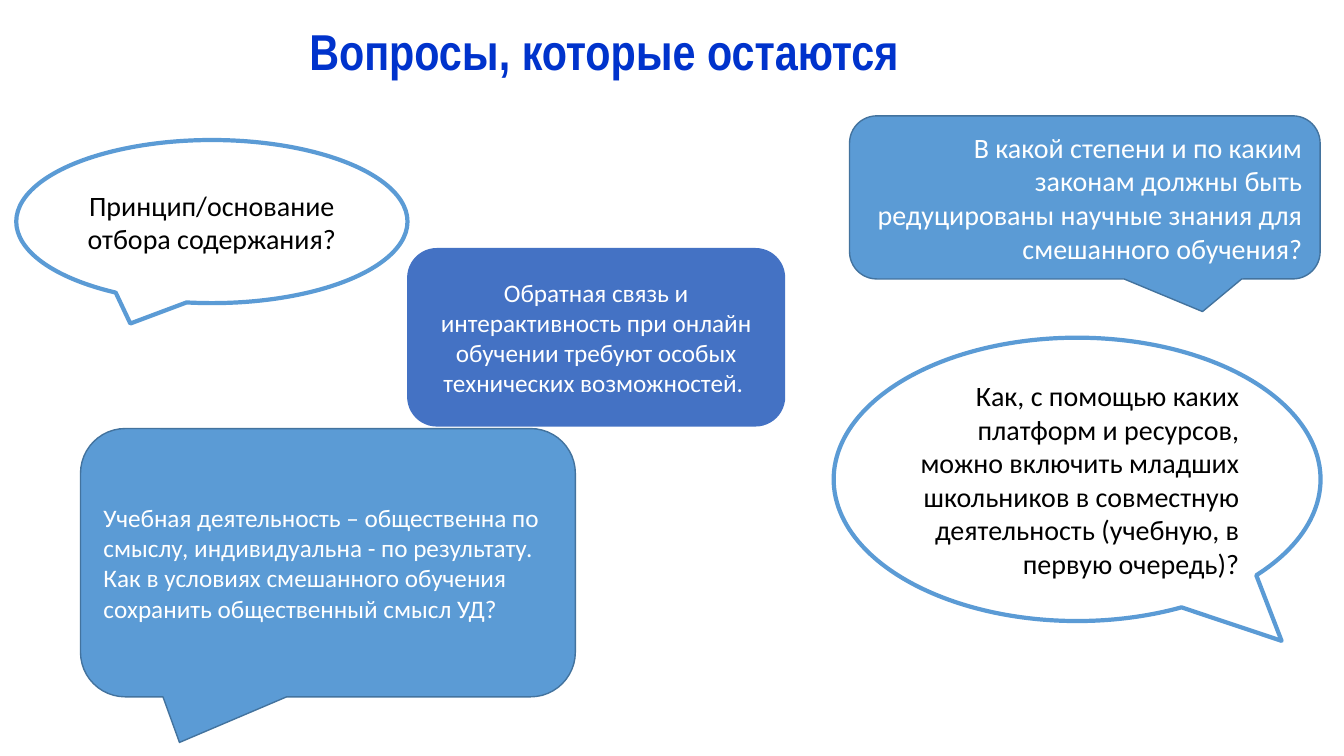
from dataclasses import dataclass

from pptx import Presentation
from pptx.dml.color import RGBColor
from pptx.enum.shapes import MSO_SHAPE
from pptx.enum.text import MSO_ANCHOR, MSO_AUTO_SIZE, PP_ALIGN
from pptx.slide import Slide
from pptx.util import Cm, Pt

OVAL_CALLOUT = MSO_SHAPE.OVAL_CALLOUT
ROUNDED_CALLOUT = MSO_SHAPE.ROUNDED_RECTANGULAR_CALLOUT
ROUNDED_BOX = MSO_SHAPE.ROUNDED_RECTANGLE
LEFT, CENTER, RIGHT = PP_ALIGN.LEFT, PP_ALIGN.CENTER, PP_ALIGN.RIGHT
MIDDLE = MSO_ANCHOR.MIDDLE
NO_AUTOFIT = MSO_AUTO_SIZE.NONE

WHITE = RGBColor(0xFF, 0xFF, 0xFF)
BLACK = RGBColor(0x00, 0x00, 0x00)
TITLE_BLUE = RGBColor(0x00, 0x33, 0xCC)
LIGHT_BLUE = RGBColor(0x5B, 0x9B, 0xD5)
EDGE_BLUE = RGBColor(0x43, 0x73, 0x9E)
DEEP_BLUE = RGBColor(0x44, 0x72, 0xC4)

TITLE_LAYOUT = 5


@dataclass(frozen=True)
class Style:
    outline: MSO_SHAPE
    fill: RGBColor
    text: RGBColor
    line: RGBColor | None = None
    line_width: float = 0


@dataclass(frozen=True)
class Question:
    """A bubble; frame is left, top, width, height in cm, tip the pointer offset."""
    text: str
    style: Style
    frame: tuple[float, float, float, float]
    size: int
    align: PP_ALIGN
    tip: tuple[float, float] | None = None


OVAL = Style(OVAL_CALLOUT, WHITE, BLACK, LIGHT_BLUE, 3)
SPEECH = Style(ROUNDED_CALLOUT, LIGHT_BLUE, WHITE, EDGE_BLUE, 1)
PANEL = Style(ROUNDED_BOX, DEEP_BLUE, WHITE)

QUESTIONS = [
    Question("Принцип/основание отбора содержания?",
             OVAL, (0.41, 3.53, 9.86, 4.11), 20, CENTER),
    Question("В какой степени и по каким законам должны быть редуцированы "
             "научные знания для смешанного обучения?",
             SPEECH, (21.41, 2.92, 11.86, 4.11), 20, RIGHT, (0.25, 0.7)),
    Question("Обратная связь и интерактивность при онлайн обучении требуют "
             "особых технических возможностей. ",
             PANEL, (10.26, 6.25, 9.53, 4.5), 18, CENTER),
    Question("Как, с помощью каких платформ и ресурсов, можно включить младших "
             "школьников в совместную деятельность (учебную, в первую очередь)?",
             OVAL, (21.01, 8.51, 12.27, 7.14), 20, RIGHT, (0.42, 0.57)),
    Question("Учебная деятельность – общественна по смыслу, индивидуальна - по "
             "результату. Как в условиях смешанного обучения сохранить "
             "общественный смысл УД?",
             SPEECH, (2.03, 10.8, 12.47, 6.76), 18, LEFT, (-0.3, 0.67)),
]


def add_title(page: Slide, text: str) -> None:
    title = page.shapes.title
    title.left, title.top = Cm(7.54), Cm(0.36)
    title.width, title.height = Cm(17.4), Cm(1.8)
    frame = title.text_frame
    frame.text = text
    frame.auto_size = NO_AUTOFIT
    frame.vertical_anchor = MIDDLE
    para = frame.paragraphs[0]
    para.alignment = LEFT
    para.font.name = "Arial Narrow"
    para.font.size = Pt(36)
    para.font.bold = True
    para.font.color.rgb = TITLE_BLUE


def add_question(page: Slide, question: Question) -> None:
    style = question.style
    box = page.shapes.add_shape(style.outline, *map(Cm, question.frame))
    box.shadow.inherit = False
    box.fill.solid()
    box.fill.fore_color.rgb = style.fill
    if style.line is None:
        box.line.fill.background()
    else:
        box.line.color.rgb = style.line
        box.line.width = Pt(style.line_width)
    if question.tip:
        box.adjustments[0], box.adjustments[1] = question.tip

    frame = box.text_frame
    frame.text = question.text
    frame.word_wrap = True
    frame.vertical_anchor = MIDDLE
    para = frame.paragraphs[0]
    para.alignment = question.align
    para.font.name = "Calibri"
    para.font.size = Pt(question.size)
    para.font.color.rgb = style.text


def main() -> None:
    deck = Presentation()
    deck.slide_width, deck.slide_height = Cm(33.87), Cm(19.05)
    page = deck.slides.add_slide(deck.slide_layouts[TITLE_LAYOUT])
    add_title(page, "Вопросы, которые остаются")
    for question in QUESTIONS:
        add_question(page, question)
    deck.save("out.pptx")


if __name__ == "__main__":
    main()
